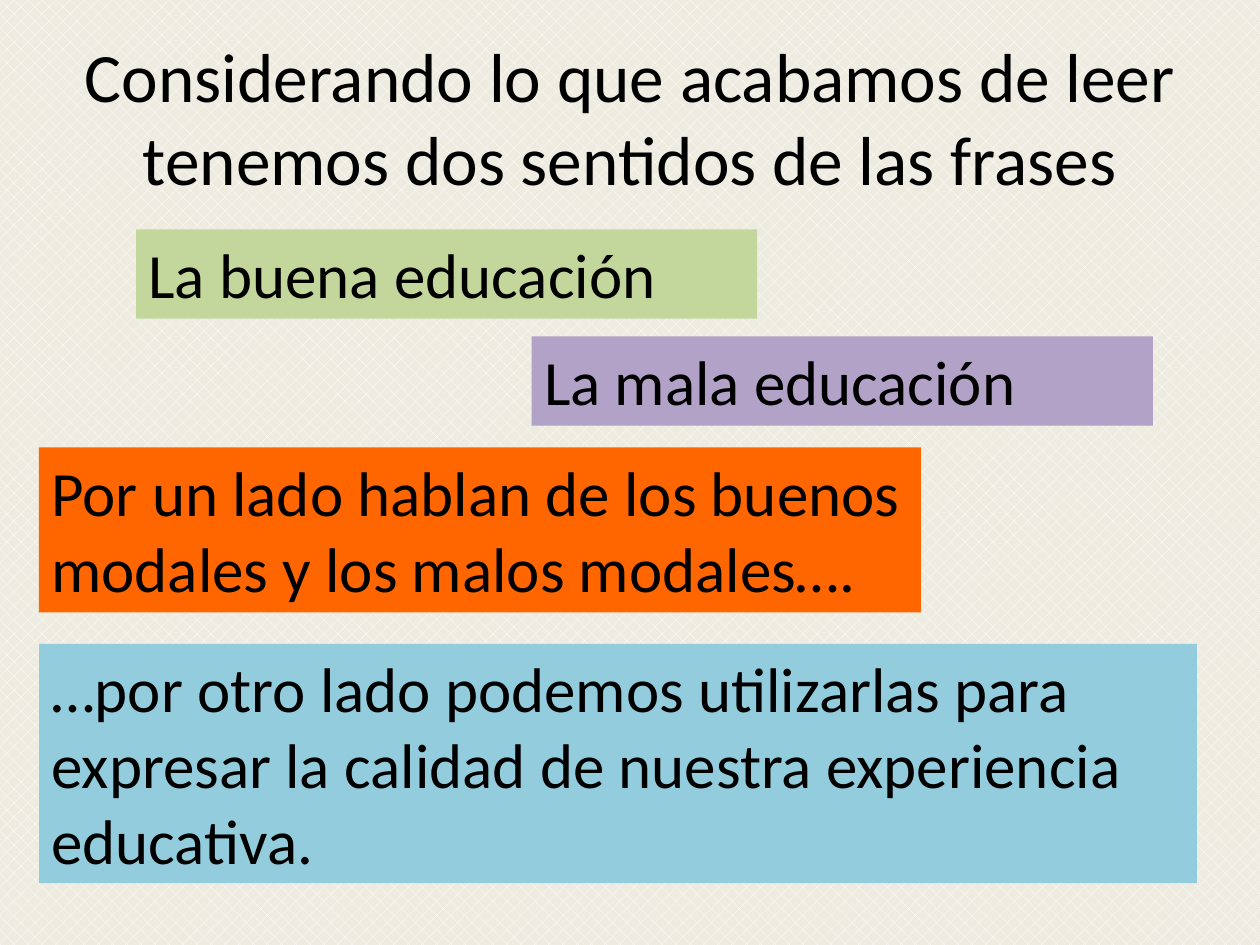
from pptx import Presentation
from pptx.dml.color import RGBColor
from pptx.enum.dml import MSO_PATTERN_TYPE as Pattern
from pptx.enum.text import MSO_ANCHOR as Anchor, MSO_AUTO_SIZE as AutoSize, PP_ALIGN as Align
from pptx.util import Pt

COLORS = {
    "text": "000000", "hatch": "FFFFFF", "paper": "EEECE1",
    "purple": "B3A2C7", "green": "C3D69B", "orange": "FF6600", "blue": "93CDDD",
}
TITLE = "Considerando lo que acabamos de leer tenemos dos sentidos de las frases"
TITLE_PLACE = (36, 21.6, 648, 90)
# text, fill, (left, top, width, height)
PHRASES = [
    ("La mala educación", "purple", (303.84, 192.24, 355, 51)),
    ("La buena educación", "green", (77.76, 131.04, 355, 51)),
    ("Por un lado hablan de los buenos modales y los malos modales….",
     "orange", (22.32, 255.6, 504, 94.3)),
    ("…por otro lado podemos utilizarlas para expresar la calidad de nuestra "
     "experiencia educativa.", "blue", (22.32, 367.92, 661.68, 136.8)),
]
TITLE_FRAME = {"word_wrap": True, "auto_size": AutoSize.NONE, "vertical_anchor": Anchor.MIDDLE}
PHRASE_FRAME = {"word_wrap": True, "auto_size": AutoSize.SHAPE_TO_FIT_TEXT,
                "vertical_anchor": Anchor.TOP}


def color(name):
    return RGBColor.from_string(COLORS[name])


def write(box, text, size, align, frame_format):
    frame = box.text_frame
    for name, value in frame_format.items():
        setattr(frame, name, value)
    para = frame.paragraphs[0]
    para.alignment = align
    span = para.add_run()
    span.text = text
    for name, value in {"name": "Calibri", "size": Pt(size)}.items():
        setattr(span.font, name, value)
    span.font.color.rgb = color("text")


def main():
    deck = Presentation()
    deck.slide_width, deck.slide_height = Pt(720), Pt(540)
    page = deck.slides.add_slide(deck.slide_layouts[5])

    background = page.background.fill
    background.patterned()
    background.pattern = Pattern.PERCENT_25
    background.fore_color.rgb = color("hatch")
    background.back_color.rgb = color("paper")

    title = page.shapes.title
    title.left, title.top, title.width, title.height = map(Pt, TITLE_PLACE)
    write(title, TITLE, 39.6, Align.CENTER, TITLE_FRAME)

    for text, fill, place in PHRASES:
        box = page.shapes.add_textbox(*map(Pt, place))
        box.fill.solid()
        box.fill.fore_color.rgb = color(fill)
        write(box, text, 36, Align.LEFT, PHRASE_FRAME)

    deck.save("out.pptx")


if __name__ == "__main__":
    main()
